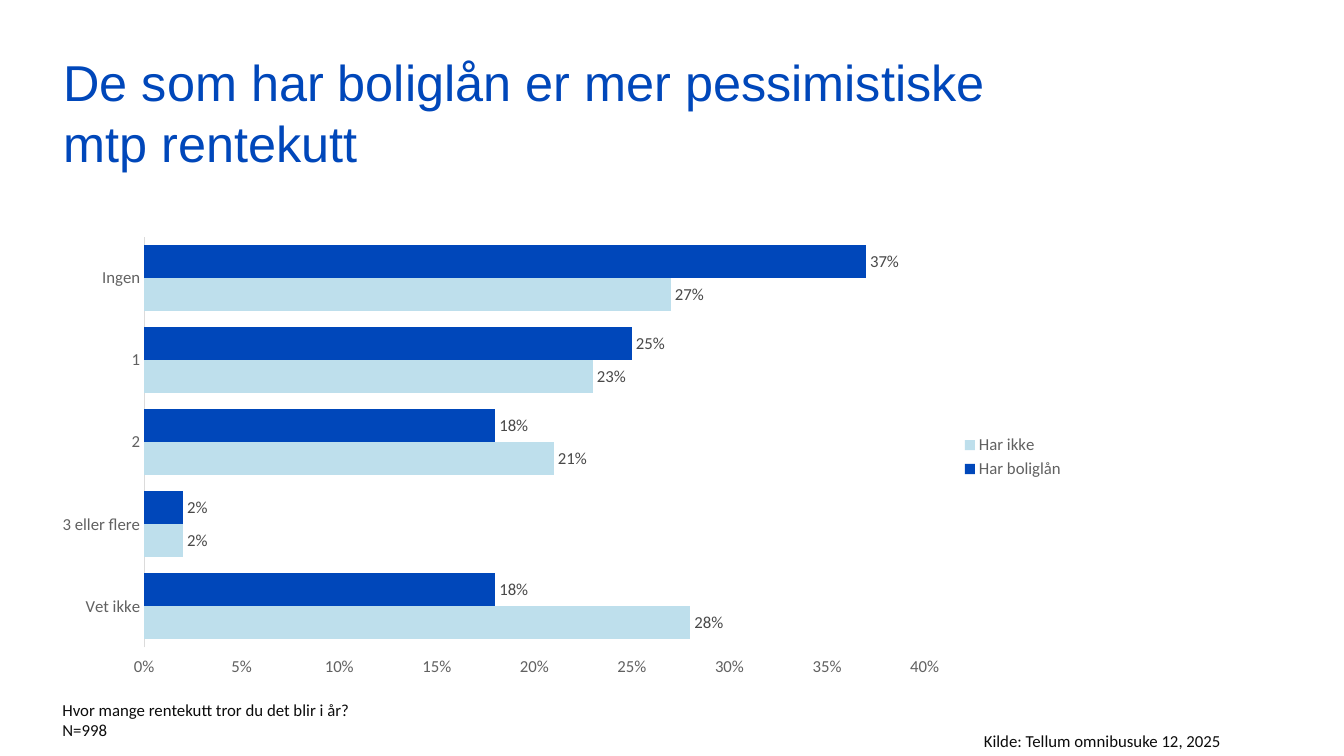
import dataclasses

import pptx
import pptx.chart.data
import pptx.dml.color
import pptx.enum.chart
import pptx.enum.text
import pptx.util

PX = 9144


@dataclasses.dataclass(frozen=True)
class Theme:
    blue: str = "0047BA"
    pale: str = "BEDFEC"
    ink: str = "0C0C0C"
    axis: str = "616161"
    label: str = "494949"
    line: str = "DBDBDB"
    head: str = "Arial"
    body: str = "Calibri"
    large: int = 36
    small: int = 12


class Deck:
    """Draws slide elements in one theme, with lengths in hundredths of an inch."""

    def __init__(self, theme, width, height):
        self.theme = theme
        self.file = pptx.Presentation()
        self.file.slide_width = width * PX
        self.file.slide_height = height * PX
        self.slide = self.file.slides.add_slide(self.file.slide_layouts[6])

    def color(self, code):
        return pptx.dml.color.RGBColor.from_string(code)

    def style(self, font, face, size, code):
        font.name = face
        font.size = pptx.util.Pt(size)
        font.color.rgb = self.color(code)

    def text(self, box, words, face, size, code):
        shape = self.slide.shapes.add_textbox(*(n * PX for n in box))
        frame = shape.text_frame
        frame.word_wrap = True
        frame.text = words
        for para in frame.paragraphs:
            for run in para.runs:
                self.style(run.font, face, size, code)
        return frame

    def title(self, box, words):
        frame = self.text(box, words, self.theme.head, self.theme.large, self.theme.blue)
        frame.margin_left = frame.margin_right = 0
        frame.margin_top = frame.margin_bottom = 0
        frame.vertical_anchor = pptx.enum.text.MSO_ANCHOR.BOTTOM

    def note(self, box, words):
        self.text(box, words, self.theme.body, self.theme.small, self.theme.ink)

    def bars(self, box, names, rows):
        theme, kinds = self.theme, pptx.enum.chart
        data = pptx.chart.data.CategoryChartData(number_format="0%")
        data.categories = names
        for name, values, fill in rows:
            data.add_series(name, values)
        chart = self.slide.shapes.add_chart(
            kinds.XL_CHART_TYPE.BAR_CLUSTERED, *(n * PX for n in box), data).chart
        chart.has_title = False
        self.style(chart.font, theme.body, theme.small, theme.ink)

        plot = chart.plots[0]
        plot.gap_width = 50
        plot.overlap = 0
        plot.vary_by_categories = False
        for series, (name, values, fill) in zip(plot.series, rows):
            series.format.fill.solid()
            series.format.fill.fore_color.rgb = self.color(fill)
            labels = series.data_labels
            labels.show_value = True
            labels.number_format = "0%"
            labels.number_format_is_linked = False
            labels.position = kinds.XL_LABEL_POSITION.OUTSIDE_END
            self.style(labels.font, theme.body, theme.small, theme.label)

        cats, vals = chart.category_axis, chart.value_axis
        for axis in (cats, vals):
            axis.has_major_gridlines = False
            axis.major_tick_mark = kinds.XL_TICK_MARK.NONE
            axis.minor_tick_mark = kinds.XL_TICK_MARK.NONE
            self.style(axis.tick_labels.font, theme.body, theme.small, theme.axis)
        cats.reverse_order = True
        cats.format.line.color.rgb = self.color(theme.line)
        cats.format.line.width = pptx.util.Pt(0.75)
        vals.minimum_scale, vals.maximum_scale, vals.major_unit = 0, 0.4, 0.05
        vals.tick_label_position = kinds.XL_TICK_LABEL_POSITION.HIGH
        vals.tick_labels.number_format = "0%"
        vals.tick_labels.number_format_is_linked = False
        vals.format.line.fill.background()

        chart.has_legend = True
        chart.legend.position = kinds.XL_LEGEND_POSITION.RIGHT
        chart.legend.include_in_layout = False
        self.style(chart.legend.font, theme.body, theme.small, theme.axis)


def main():
    theme = Theme()
    deck = Deck(theme, 1333, 750)
    deck.title((63, 50, 1004, 121), "De som har boliglån er mer pessimistiske mtp rentekutt")
    deck.note((966, 720, 296, 30), "Kilde: Tellum omnibusuke 12, 2025")
    deck.note((52, 689, 679, 50), "Hvor mange rentekutt tror du det blir i år?\nN=998")
    deck.bars(
        (62, 226, 1004, 455),
        ["Ingen", "1", "2", "3 eller flere", "Vet ikke"],
        [("Har boliglån", (0.37, 0.25, 0.18, 0.02, 0.18), theme.blue),
         ("Har ikke", (0.27, 0.23, 0.21, 0.02, 0.28), theme.pale)])
    deck.file.save("out.pptx")


if __name__ == "__main__":
    main()
